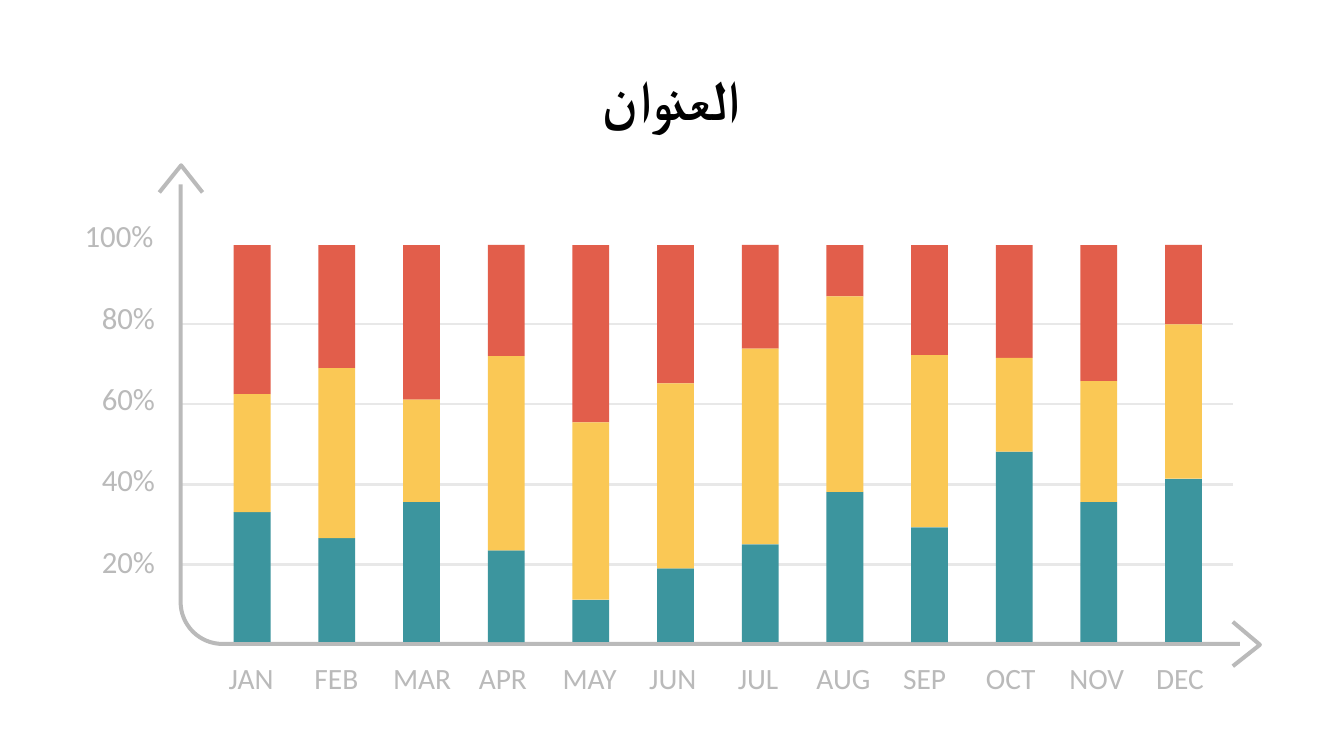
from math import cos, pi, sin

from lxml.etree import SubElement
from pptx import Presentation
from pptx.dml.color import RGBColor
from pptx.enum.shapes import MSO_CONNECTOR, MSO_SHAPE
from pptx.enum.text import PP_ALIGN
from pptx.oxml.ns import qn
from pptx.util import Pt

TEAL, YELLOW, RED = "3C959E", "FAC855", "E25E4B"
AXIS_GRAY, GRID_GRAY = "BABABA", "E8E8E8"
BAR_LEFT, BAR_PITCH, BAR_WIDTH = 167, 60.48, 26.3
BAR_TOP, BAR_BOTTOM = 175, 458.6
AXIS_X, AXIS_Y, CORNER = 129, 460, 30

# Month, label left, label width, top of yellow part, top of teal part
MONTHS = [
    ("JAN", 163.4, 47.5, 281.5, 365.8),
    ("FEB", 224.6, 49, 262.9, 384.3),
    ("MAR", 280.8, 58.3, 285.4, 358.6),
    ("APR", 342, 51.8, 254.3, 393.1),
    ("MAY", 401.8, 56.9, 301.8, 428.4),
    ("JUN", 463.7, 49.7, 273.8, 406.1),
    ("JUL", 527, 44.6, 249.1, 388.8),
    ("AUG", 583.2, 56.9, 211.7, 351.4),
    ("SEP", 645.1, 49, 253.6, 376.6),
    ("OCT", 704.2, 54, 255.6, 322.6),
    ("NOV", 763.9, 57.6, 272.2, 358.6),
    ("DEC", 825.8, 53.3, 231.8, 342),
]


def color(hex_string):
    return RGBColor.from_string(hex_string)


def add_label(text, left, top, width, height, size, font_name="Calibri", fill=AXIS_GRAY):
    """Add a text box without insets and return its paragraph."""
    frame = slide.shapes.add_textbox(Pt(left), Pt(top), Pt(width), Pt(height)).text_frame
    frame.word_wrap = True
    frame.margin_left = frame.margin_top = frame.margin_right = frame.margin_bottom = 0
    paragraph = frame.paragraphs[0]
    paragraph.text = text
    paragraph.font.name = font_name
    paragraph.font.size = Pt(size)
    paragraph.font.color.rgb = color(fill)
    return paragraph


presentation = Presentation()
presentation.slide_width, presentation.slide_height = Pt(960), Pt(540)
slide = presentation.slides.add_slide(presentation.slide_layouts[6])

title = add_label("العنوان", 225.4, 46, 509, 49.7, 40, "Montserrat", "000000")
title.alignment = PP_ALIGN.CENTER
title.font.bold = True

# Axis labels
for month, left, width, _, _ in MONTHS:
    add_label(month, left, 471.6, width, 35.3, 21)
for step in range(4):
    add_label(f"{20 * (step + 1)}%", 72.7, 387.4 - 58.1 * step, 58.3, 38.2, 22)
add_label("100%", 60.5, 154.8, 72, 38.2, 22)

# Grid lines
for step in range(4):
    y = Pt(403.2 - 57.2 * step)
    grid_line = slide.shapes.add_connector(MSO_CONNECTOR.STRAIGHT, Pt(AXIS_X), y, Pt(880.6), y)
    grid_line.line.color.rgb = color(GRID_GRAY)
    grid_line.line.width = Pt(1.62)
    SubElement(grid_line._element.spPr, qn("a:effectLst"))

# Axes with a rounded corner, and their open arrowheads
corner_angles = [pi / 2 * (1 + step / 16) for step in range(17)]
axis = [(885.6, AXIS_Y)]
axis += [(AXIS_X + CORNER * (1 + cos(angle)), AXIS_Y - CORNER * (1 - sin(angle)))
         for angle in corner_angles]
axis += [(AXIS_X, 131.8)]
up_arrow = [(113.8, 137.5), (129.4, 118.1), (144.7, 137.5)]
right_arrow = [(880.6, 444.2), (900, 460.6), (880.6, 475.9)]
for points in (axis, up_arrow, right_arrow):
    start, *others = [(Pt(x), Pt(y)) for x, y in points]
    builder = slide.shapes.build_freeform(*start)
    builder.add_line_segments(others, close=False)
    shape = builder.convert_to_shape()
    shape.shadow.inherit = False
    shape.fill.background()
    shape.line.color.rgb = color(AXIS_GRAY)
    shape.line.width = Pt(2.87)

# Stacked bars
for index, (_, _, _, yellow_top, teal_top) in enumerate(MONTHS):
    left = BAR_LEFT + BAR_PITCH * index
    for fill, top, bottom in (
        (TEAL, teal_top, BAR_BOTTOM),
        (RED, BAR_TOP, yellow_top),
        (YELLOW, yellow_top, teal_top),
    ):
        bar = slide.shapes.add_shape(
            MSO_SHAPE.RECTANGLE, Pt(left), Pt(top), Pt(BAR_WIDTH), Pt(bottom - top))
        bar.shadow.inherit = False
        bar.fill.solid()
        bar.fill.fore_color.rgb = color(fill)
        bar.line.fill.background()

presentation.save("out.pptx")
